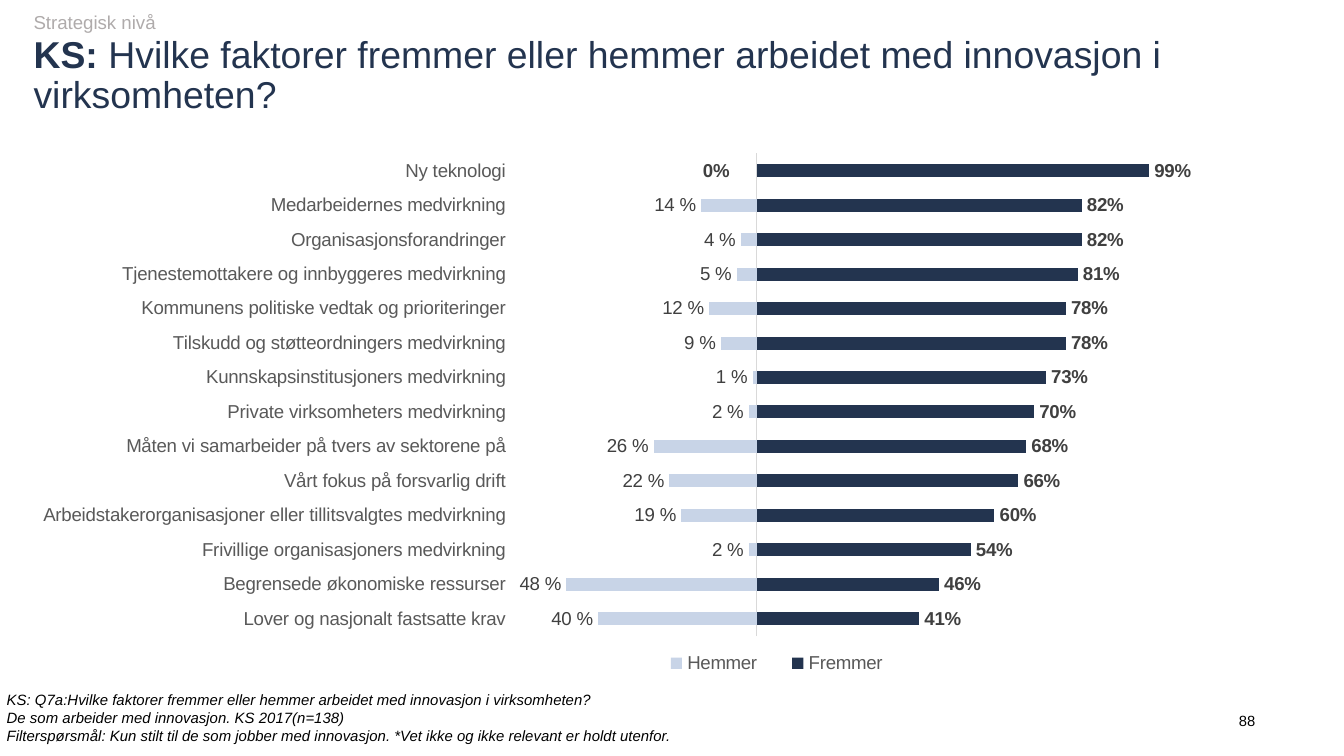
from lxml import etree
from pptx import Presentation
from pptx.chart.data import CategoryChartData
from pptx.dml.color import RGBColor
from pptx.enum.chart import XL_CHART_TYPE as ChartType
from pptx.enum.chart import XL_LABEL_POSITION as LabelPosition
from pptx.enum.chart import XL_LEGEND_POSITION as LegendPosition
from pptx.enum.chart import XL_TICK_LABEL_POSITION as TickLabels
from pptx.enum.chart import XL_TICK_MARK as TickMark
from pptx.enum.text import MSO_ANCHOR as Anchor
from pptx.enum.text import PP_ALIGN as Align
from pptx.oxml.ns import qn
from pptx.util import Inches, Pt

COLORS = {
    "navy": "23344F",
    "pale": "C8D4E7",
    "black": "000000",
    "label": "404040",
    "axis": "595959",
    "line": "D9D9D9",
    "level": "AFABAB",
}

FACTORS = [
    ("Lover og nasjonalt fastsatte krav", 0.41, -0.40),
    ("Begrensede økonomiske ressurser", 0.46, -0.48),
    ("Frivillige organisasjoners medvirkning", 0.54, -0.02),
    ("Arbeidstakerorganisasjoner eller tillitsvalgtes medvirkning", 0.60, -0.19),
    ("Vårt fokus på forsvarlig drift", 0.66, -0.22),
    ("Måten vi samarbeider på tvers av sektorene på", 0.68, -0.26),
    ("Private virksomheters medvirkning", 0.70, -0.02),
    ("Kunnskapsinstitusjoners medvirkning", 0.73, -0.01),
    ("Tilskudd og støtteordningers medvirkning", 0.78, -0.09),
    ("Kommunens politiske vedtak og prioriteringer", 0.78, -0.12),
    ("Tjenestemottakere og innbyggeres medvirkning", 0.81, -0.05),
    ("Organisasjonsforandringer", 0.82, -0.04),
    ("Medarbeidernes medvirkning", 0.82, -0.14),
    ("Ny teknologi", 0.99, 0),
]

FOOTNOTES = [
    "KS: Q7a:Hvilke faktorer fremmer eller hemmer arbeidet med innovasjon i virksomheten?",
    "De som arbeider med innovasjon. KS 2017(n=138)",
    "Filterspørsmål: Kun stilt til de som jobber med innovasjon. "
    "*Vet ikke og ikke relevant er holdt utenfor.",
]


def style(font, size, color, bold=False, italic=False):
    """Set face, size, colour and emphasis of a font."""
    font.name = "Arial"
    font.size = Pt(size)
    font.bold = bold
    font.italic = italic
    font.color.rgb = RGBColor.from_string(COLORS[color])


def add_text(slide, box, lines, size, color, anchor=Anchor.TOP, align=Align.LEFT, italic=False):
    """Add a text box without margins and return its paragraphs."""
    frame = slide.shapes.add_textbox(*map(Inches, box)).text_frame
    frame.word_wrap = True
    frame.vertical_anchor = anchor
    frame.margin_left = frame.margin_right = frame.margin_top = frame.margin_bottom = 0
    frame.text = "\n".join(lines)
    for paragraph in frame.paragraphs:
        paragraph.alignment = align
        for run in paragraph.runs:
            style(run.font, size, color, italic=italic)
    return frame.paragraphs


def add_title(slide):
    """Add the question with its bold lead-in."""
    question = add_text(slide, (0.25, 0.39, 9.67, 0.48), ["KS: "], 20, "navy", Anchor.BOTTOM)[0]
    question.line_spacing = 0.9
    question.runs[0].font.bold = True
    wording = question.add_run()
    wording.text = "Hvilke faktorer fremmer eller hemmer arbeidet med innovasjon i virksomheten?"
    style(wording.font, 20, "navy")


def set_layout(parent, position, **values):
    """Give a chart element a manual layout at a child position."""
    for old in parent.findall(qn("c:layout")):
        parent.remove(old)
    layout = etree.Element(qn("c:layout"))
    manual = etree.SubElement(layout, qn("c:manualLayout"))
    for tag, value in values.items():
        etree.SubElement(manual, qn(f"c:{tag}")).set("val", str(value))
    parent.insert(position, layout)


def style_series(series, color, number_format, bold):
    """Fill the bars and format their value labels."""
    series.format.fill.solid()
    series.format.fill.fore_color.rgb = RGBColor.from_string(COLORS[color])
    series.invert_if_negative = False
    labels = series.data_labels
    labels.show_value = True
    labels.position = LabelPosition.OUTSIDE_END
    labels.number_format = number_format
    labels.number_format_is_linked = False
    style(labels.font, 10, "label", bold)
    for leader in labels._element.findall(qn("c:showLeaderLines")):
        leader.set("val", "0")


def style_axes(chart):
    """Show the factors at the far left and hide the value scale."""
    factors = chart.category_axis
    factors.tick_label_position = TickLabels.LOW
    factors.major_tick_mark = factors.minor_tick_mark = TickMark.NONE
    factors.has_major_gridlines = False
    style(factors.tick_labels.font, 10, "axis")
    factors.format.line.color.rgb = RGBColor.from_string(COLORS["line"])
    factors.format.line.width = Pt(0.75)
    shares = chart.value_axis
    shares.minimum_scale, shares.maximum_scale = -0.6, 1.2
    shares.has_major_gridlines = False
    shares.visible = False


def add_factor_chart(slide):
    """Add the diverging bars of promoting and hindering factors."""
    names, promoting, hindering = zip(*FACTORS)
    data = CategoryChartData(number_format="0%")
    data.categories = names
    data.add_series("Fremmer", promoting)
    data.add_series("Hemmer", hindering)
    box = map(Inches, (-0.38, 0.86, 9.55, 4.29))
    chart = slide.shapes.add_chart(ChartType.BAR_CLUSTERED, *box, data).chart
    style(chart.font, 10, "black")
    chart.has_title = False
    style_axes(chart)

    plot = chart.plots[0]
    plot.gap_width, plot.overlap = 165, 100
    plot.vary_by_categories = False
    promotes, hinders = plot.series
    style_series(promotes, "navy", "0%", True)
    style_series(hinders, "pale", "0%;0 %", False)
    zero_label = hinders.points[len(FACTORS) - 1].data_label
    style(zero_label.font, 10, "label", True)
    zero_label.position = LabelPosition.OUTSIDE_END
    zero = hinders.data_labels._element.find(qn("c:dLbl"))
    set_layout(zero, 1, x=-0.046, y=0)

    area = chart._chartSpace.chart.plotArea
    set_layout(area, 0, layoutTarget="inner", xMode="edge", yMode="edge",
               x=0.444, y=0.066, w=0.556, h=0.837)
    chart.has_legend = True
    chart.legend.position = LegendPosition.BOTTOM
    chart.legend.include_in_layout = False
    style(chart.legend.font, 10, "axis")
    set_layout(chart.legend._element, 1, xMode="edge", yMode="edge",
               x=0.54, y=0.91, w=0.21, h=0.08)


def main():
    """Build the slide and save it."""
    deck = Presentation()
    deck.slide_width, deck.slide_height = Inches(10), Inches(5.625)
    slide = deck.slides.add_slide(deck.slide_layouts[6])
    add_text(slide, (0.05, 5.14, 8.55, 0.4), FOOTNOTES, 8, "black", italic=True)
    add_factor_chart(slide)
    add_text(slide, (9.09, 5.29, 0.25, 0.15), ["88"], 7.9, "black", Anchor.MIDDLE, Align.RIGHT)
    add_title(slide)
    add_text(slide, (0.25, 0, 0.98, 0.25), ["Strategisk nivå"], 10, "level", Anchor.BOTTOM)
    deck.save("out.pptx")


if __name__ == "__main__":
    main()
